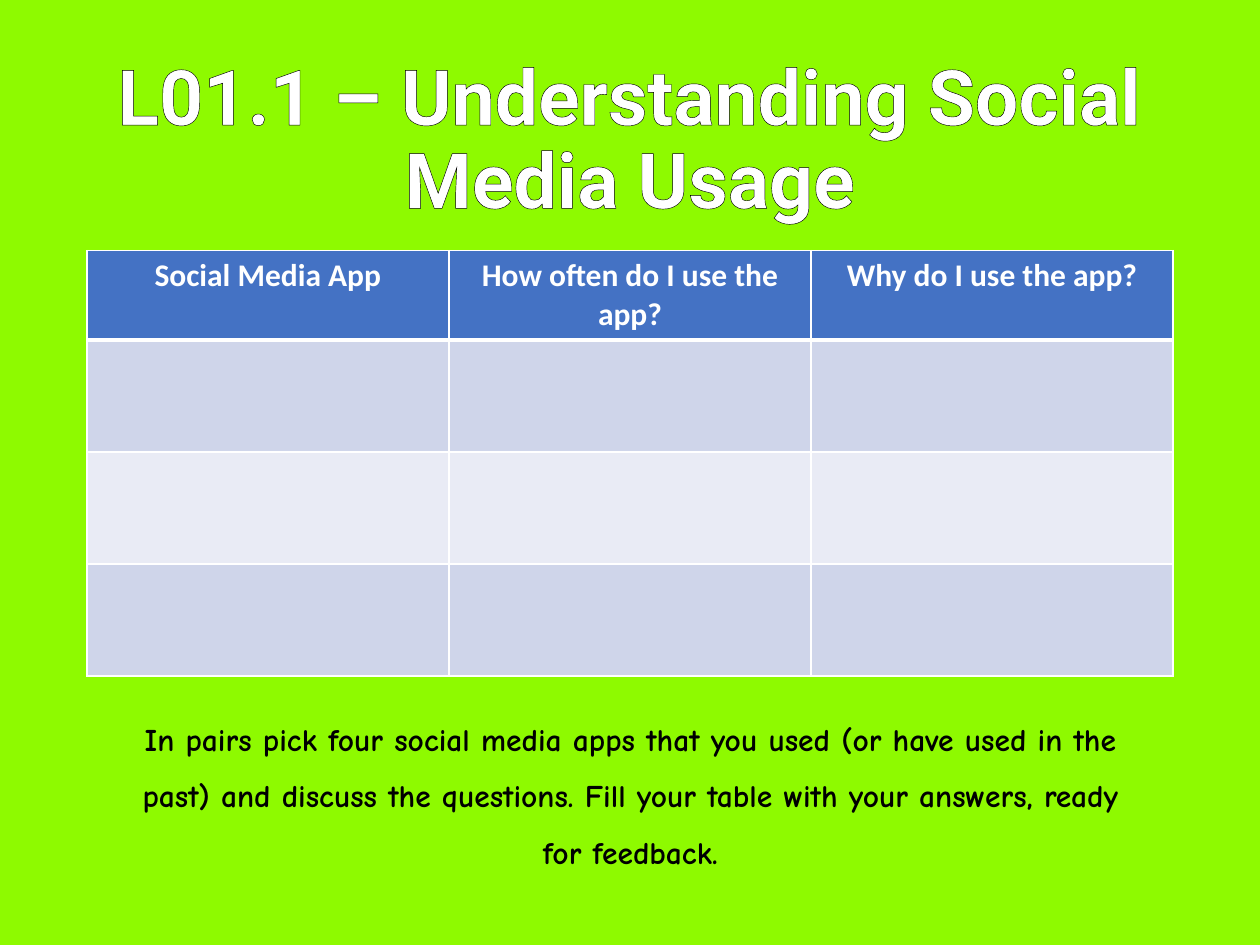
from dataclasses import dataclass

from lxml import etree
from pptx import Presentation
from pptx import util as u
from pptx.dml.color import RGBColor
from pptx.enum import text
from pptx.oxml import ns

COLORS = {
    "background": "8EFA00",
    "white": "FFFFFF",
    "black": "000000",
    "header": "4472C4",
    "dark_band": "CFD5EA",
    "light_band": "E9EBF5",
}
HEADERS = ["Social Media App", "How often do I use the app?", "Why do I use the app?"]
ANSWER_ROWS = 3
COL_WIDTH, HEADER_HEIGHT, ANSWER_HEIGHT = 7.3, 1.78, 2.26
THIN, THICK = 1, 3


@dataclass
class TextBlock:
    """Outlined, centred text; box lengths in cm."""
    wording: str
    box: tuple[float, float, float, float]
    font: str
    size: int
    color: str
    spacing: float
    anchor: text.MSO_ANCHOR
    auto_size: text.MSO_AUTO_SIZE


BLOCKS = [
    TextBlock("L01.1 – Understanding Social Media Usage", (1.75, 1.02, 21.9, 3.68),
              "Roboto", 44, "white", 0.9,
              text.MSO_ANCHOR.MIDDLE, text.MSO_AUTO_SIZE.NONE),
    TextBlock("In pairs pick four social media apps that you used (or have used in the "
              "past) and discuss the questions. Fill your table with your answers, "
              "ready for feedback.", (2.6, 14, 20.22, 3.58),
              "Comic Neue", 18, "black", 1.5,
              text.MSO_ANCHOR.TOP, text.MSO_AUTO_SIZE.SHAPE_TO_FIT_TEXT),
]


def rgb(name: str) -> RGBColor:
    return RGBColor.from_string(COLORS[name])


def make_line(tag: str, color: str, points: float):
    ln = etree.Element(ns.qn(f"a:{tag}"), w=str(u.Pt(points)))
    fill = etree.SubElement(ln, ns.qn("a:solidFill"))
    etree.SubElement(fill, ns.qn("a:srgbClr"), val=COLORS[color])
    return ln


def format_run(r, font: str, size: int, color: str) -> None:
    r.font.name, r.font.size, r.font.bold = font, u.Pt(size), True
    r.font.color.rgb = rgb(color)


def add_text(s, block: TextBlock) -> None:
    tf = s.shapes.add_textbox(*map(u.Cm, block.box)).text_frame
    tf.word_wrap = True
    tf.auto_size = block.auto_size
    tf.vertical_anchor = block.anchor
    tf.text = block.wording
    p = tf.paragraphs[0]
    p.alignment = text.PP_ALIGN.CENTER
    p.line_spacing = block.spacing
    r = p.runs[0]
    format_run(r, block.font, block.size, block.color)
    r._r.get_or_add_rPr().insert(0, make_line("ln", "black", 0.75))


def style_cell(cell, fill: str, top: float, bottom: float) -> None:
    cell.fill.solid()
    cell.fill.fore_color.rgb = rgb(fill)
    borders = {"lnL": THIN, "lnR": THIN, "lnT": top, "lnB": bottom}
    for i, (side, width) in enumerate(borders.items()):
        cell._tc.get_or_add_tcPr().insert(i, make_line(side, "white", width))


def add_answer_table(s) -> None:
    heights = [HEADER_HEIGHT] + [ANSWER_HEIGHT] * ANSWER_ROWS
    table = s.shapes.add_table(
        len(heights), len(HEADERS), u.Cm(1.75), u.Cm(5.05),
        u.Cm(COL_WIDTH * len(HEADERS)), u.Cm(sum(heights))).table
    for col in table.columns:
        col.width = u.Cm(COL_WIDTH)
    for i, height in enumerate(heights):
        table.rows[i].height = u.Cm(height)
        band = "header" if i == 0 else "dark_band" if i % 2 else "light_band"
        for cell in table.rows[i].cells:
            style_cell(cell, band, THICK if i == 1 else THIN, THICK if i == 0 else THIN)
    for cell, heading in zip(table.rows[0].cells, HEADERS):
        cell.text = heading
        p = cell.text_frame.paragraphs[0]
        p.alignment = text.PP_ALIGN.CENTER
        format_run(p.runs[0], "Calibri", 18, "white")


def main() -> None:
    prs = Presentation()
    prs.slide_width, prs.slide_height = u.Cm(25.4), u.Cm(19.05)
    s = prs.slides.add_slide(prs.slide_layouts[6])
    s.background.fill.solid()
    s.background.fill.fore_color.rgb = rgb("background")
    title, task = BLOCKS
    add_text(s, title)
    add_answer_table(s)
    add_text(s, task)
    prs.save("out.pptx")


if __name__ == "__main__":
    main()
